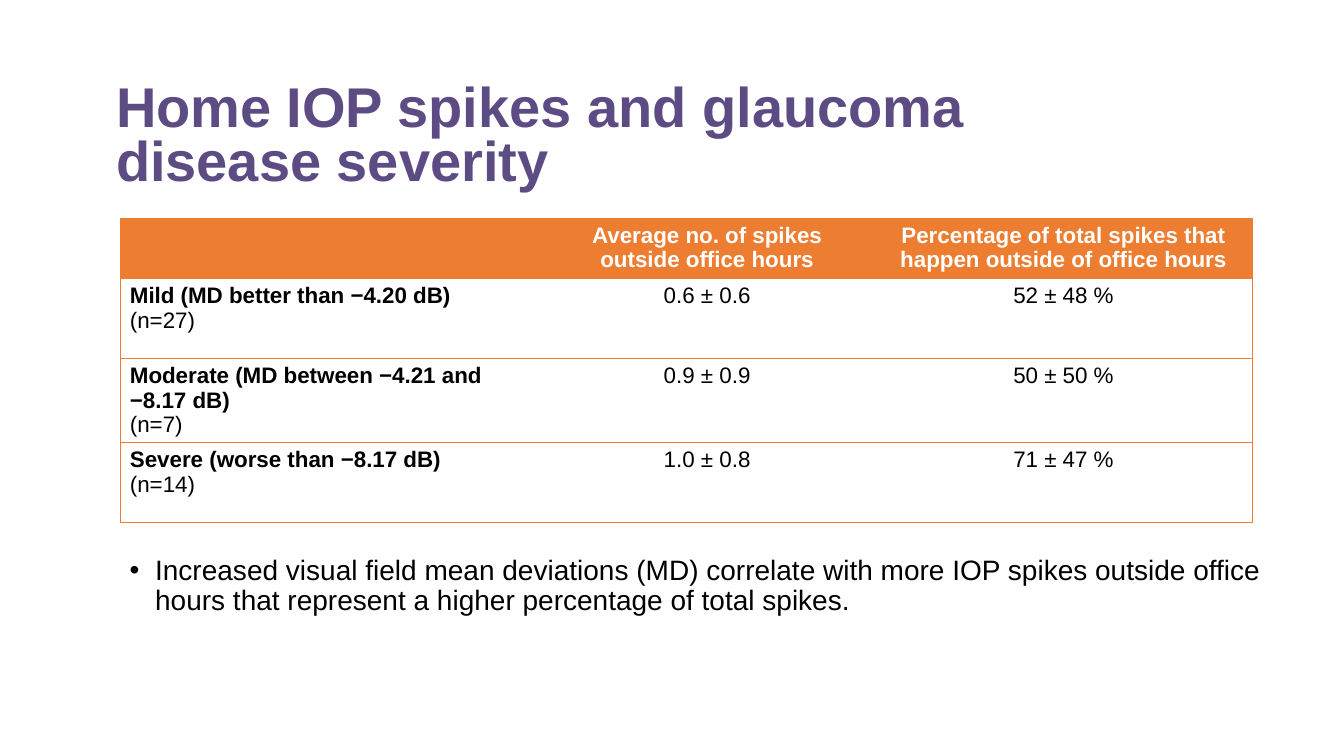
from lxml import etree
from pptx import Presentation
from pptx.dml.color import RGBColor
from pptx.enum.text import MSO_ANCHOR, MSO_AUTO_SIZE, PP_ALIGN
from pptx.oxml.ns import qn
from pptx.util import Cm, Pt

LEFT, MID = PP_ALIGN.LEFT, PP_ALIGN.CENTER
TOP, CENTER = MSO_ANCHOR.TOP, MSO_ANCHOR.MIDDLE
FIXED = MSO_AUTO_SIZE.NONE

PURPLE = RGBColor(0x5D, 0x4C, 0x84)
ORANGE = RGBColor(0xED, 0x7D, 0x31)
WHITE = RGBColor(0xFF, 0xFF, 0xFF)
BLACK = RGBColor(0, 0, 0)

TITLE = "Home IOP spikes and glaucoma disease severity"
NOTE = ("Increased visual field mean deviations (MD) correlate with more IOP "
        "spikes outside office hours that represent a higher percentage of "
        "total spikes.")
ROWS = [
    ("", "Average no. of spikes outside office hours",
     "Percentage of total spikes that happen outside of office hours"),
    ("Mild (MD better than −4.20 dB)\n(n=27)", "0.6 ± 0.6", "52 ± 48 %"),
    ("Moderate (MD between −4.21 and −8.17 dB)\n(n=7)",
     "0.9 ± 0.9", "50 ± 50 %"),
    ("Severe (worse than −8.17 dB)\n(n=14)", "1.0 ± 0.8", "71 ± 47 %"),
]
WIDTHS = [Cm(10.57), Cm(8.46), Cm(9.5)]
HEIGHTS = [Cm(1.52)] + [Cm(2.01)] * 3


def style(para, size, color, bold=False, **form):
    """Format one paragraph and its font."""
    for key, value in form.items():
        setattr(para, key, value)
    font = para.font
    look = {"name": "Arial", "size": Pt(size), "bold": bold}
    for target in [font] + [run.font for run in para.runs]:
        for key, value in look.items():
            setattr(target, key, value)
        target.color.rgb = color


def edge(cell, side, shown):
    """Draw or clear one border of a cell."""
    line = etree.SubElement(cell._tc.get_or_add_tcPr(), qn("a:ln" + side),
                            w=str(Pt(0.5)))
    if shown:
        fill = etree.SubElement(line, qn("a:solidFill"))
        etree.SubElement(fill, qn("a:srgbClr"), val=str(ORANGE))
    else:
        etree.SubElement(line, qn("a:noFill"))


def add_title(slide):
    """Place and format the title."""
    title = slide.shapes.title
    place = {"left": Cm(2.67), "top": Cm(2.49),
             "width": Cm(25.07), "height": Cm(1.98)}
    for key, value in place.items():
        setattr(title, key, value)
    frame = title.text_frame
    frame.text = TITLE
    frame.auto_size, frame.vertical_anchor = FIXED, CENTER
    style(frame.paragraphs[0], 40, PURPLE, True,
          alignment=LEFT, line_spacing=0.8)


def add_grid(slide):
    """Add the table of spikes by severity."""
    grid = slide.shapes.add_table(
        len(ROWS), len(WIDTHS), Cm(3.02), Cm(5.49),
        sum(WIDTHS), sum(HEIGHTS)).table
    grid.horz_banding = False
    for col, width in zip(grid.columns, WIDTHS):
        col.width = width
    last = len(WIDTHS) - 1
    for r, (row, height) in enumerate(zip(ROWS, HEIGHTS)):
        grid.rows[r].height = height
        for c, text in enumerate(row):
            cell = grid.cell(r, c)
            sides = {"L": c == 0, "R": c == last, "T": True, "B": True}
            for side, shown in sides.items():
                edge(cell, side, shown)
            if r == 0:
                cell.fill.solid()
                cell.fill.fore_color.rgb = ORANGE
            else:
                cell.fill.background()
            cell.text = text
            cell.vertical_anchor = TOP
            for n, para in enumerate(cell.text_frame.paragraphs):
                style(para, 16, BLACK if r else WHITE,
                      r == 0 or (c == 0 and n == 0),
                      alignment=MID if c else LEFT)


def add_note(slide):
    """Add the bulleted finding below the table."""
    box = slide.shapes.add_textbox(Cm(3.02), Cm(13.89), Cm(30.3), Cm(4.34))
    frame = box.text_frame
    frame.word_wrap = True
    frame.text = NOTE
    para = frame.paragraphs[0]
    props = para._p.get_or_add_pPr()
    props.set("marL", str(Cm(0.64)))
    props.set("indent", str(-Cm(0.64)))
    etree.SubElement(props, qn("a:buFont"), typeface="Arial")
    etree.SubElement(props, qn("a:buChar"), char="•")
    style(para, 20, BLACK, alignment=LEFT, line_spacing=0.9)


def main():
    """Build and save the slide."""
    deck = Presentation()
    deck.slide_width, deck.slide_height = Cm(33.87), Cm(19.05)
    slide = deck.slides.add_slide(deck.slide_layouts[5])
    add_title(slide)
    add_grid(slide)
    add_note(slide)
    deck.save("out.pptx")


if __name__ == "__main__":
    main()
